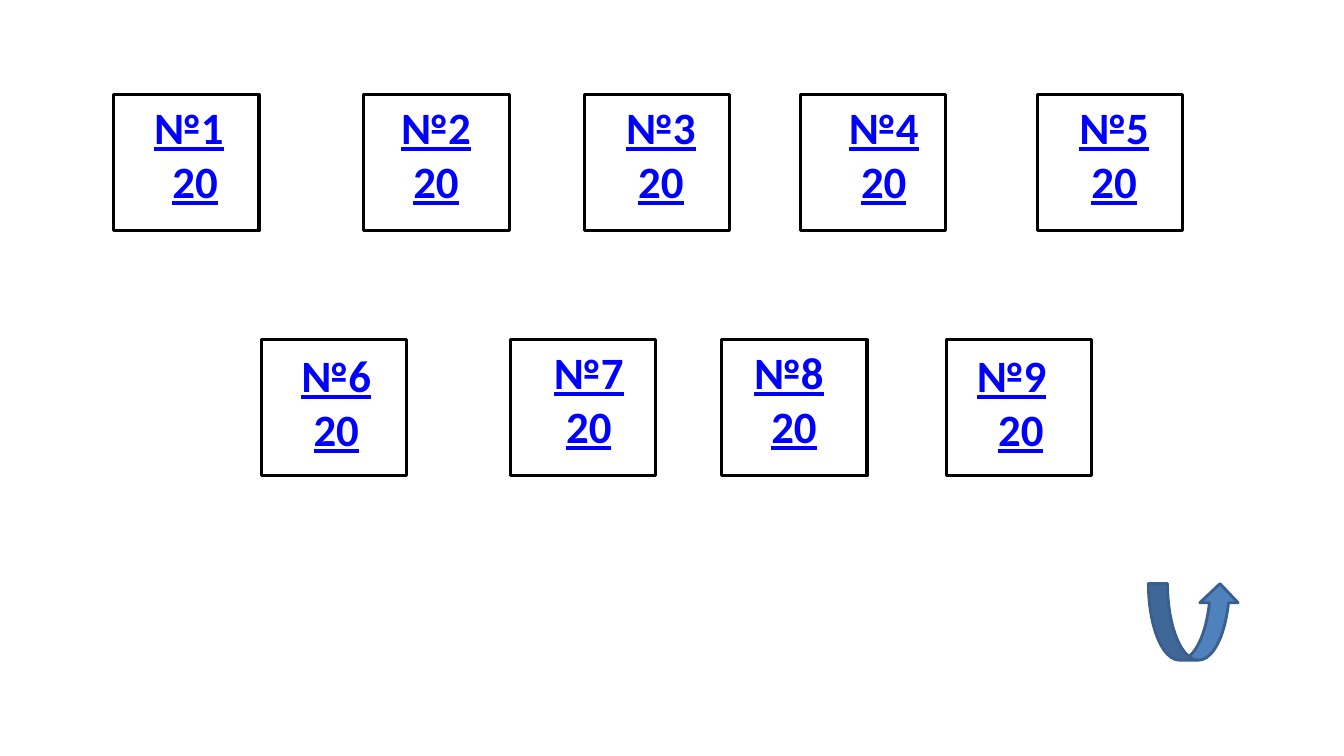
from pptx import Presentation
from pptx.dml.color import RGBColor
from pptx.enum.shapes import MSO_SHAPE as SHAPE
from pptx.enum.text import MSO_AUTO_SIZE as FIT, PP_ALIGN as ALIGN
from pptx.util import Inches, Pt

COLORS = {"paper": "FFFFFF", "ink": "000000", "label": "0000FF",
          "arrow": "4F81BD", "arrow_edge": "3A5F8C"}
POINTS = "20"
BOX_W, BOX_H = 1.44, 1.35
LABEL_H = 1.18
ROW_TOPS = [0.94, 3.37]
L, C = ALIGN.LEFT, ALIGN.CENTER

# fields: title, box left, label left, label width, label drop, title alignment
ROWS = [
    [("№1", 1.13, 1.43, 1.01, 0, L),
     ("№2", 3.61, 3.81, 1.03, 0, C),
     ("№3", 5.8, 6.08, 0.95, 0, C),
     ("№4", 7.94, 8.29, 0.95, 0, C),
     ("№5", 10.29, 10.55, 1, 0, C)],
    [("№6", 2.59, 2.79, 1.09, 0.03, C),
     ("№7", 5.06, 5.38, 0.92, 0, C),
     ("№8", 7.16, 7.38, 0.99, 0, L),
     ("№9", 9.39, 9.59, 1.07, 0.03, L)],
]


def rgb(name):
    return RGBColor.from_string(COLORS[name])


def add_figure(s, kind, box, fill, line, weight):
    sp = s.shapes.add_shape(kind, *map(Inches, box))
    sp.shadow.inherit = False
    sp.fill.solid()
    sp.fill.fore_color.rgb = rgb(fill)
    sp.line.color.rgb = rgb(line)
    sp.line.width = Pt(weight)


def add_text(s, lines, box, aligns, size=32, color="label", font="Calibri"):
    tf = s.shapes.add_textbox(*map(Inches, box)).text_frame
    tf.word_wrap = True
    tf.auto_size = FIT.SHAPE_TO_FIT_TEXT
    for i, (text, align) in enumerate(zip(lines, aligns)):
        p = tf.paragraphs[0] if i == 0 else tf.add_paragraph()
        p.alignment = align
        r = p.add_run()
        r.text = text
        r.font.name = font
        r.font.size = Pt(size)
        r.font.bold = r.font.underline = True
        r.font.color.rgb = rgb(color)


def main():
    prs = Presentation()
    prs.slide_width, prs.slide_height = Inches(13.33), Inches(7.5)
    s = prs.slides.add_slide(prs.slide_layouts[6])
    for top, row in zip(ROW_TOPS, ROWS):
        for title, box_x, label_x, label_w, drop, align in row:
            add_figure(s, SHAPE.RECTANGLE, (box_x, top, BOX_W, BOX_H),
                       "paper", "ink", 2.25)
            add_text(s, [title, POINTS],
                     (label_x, top + drop, label_w, LABEL_H), [align, C])
    add_figure(s, SHAPE.CURVED_UP_ARROW, (11.39, 5.79, 0.9, 0.76),
               "arrow", "arrow_edge", 2)
    prs.save("out.pptx")


if __name__ == "__main__":
    main()
